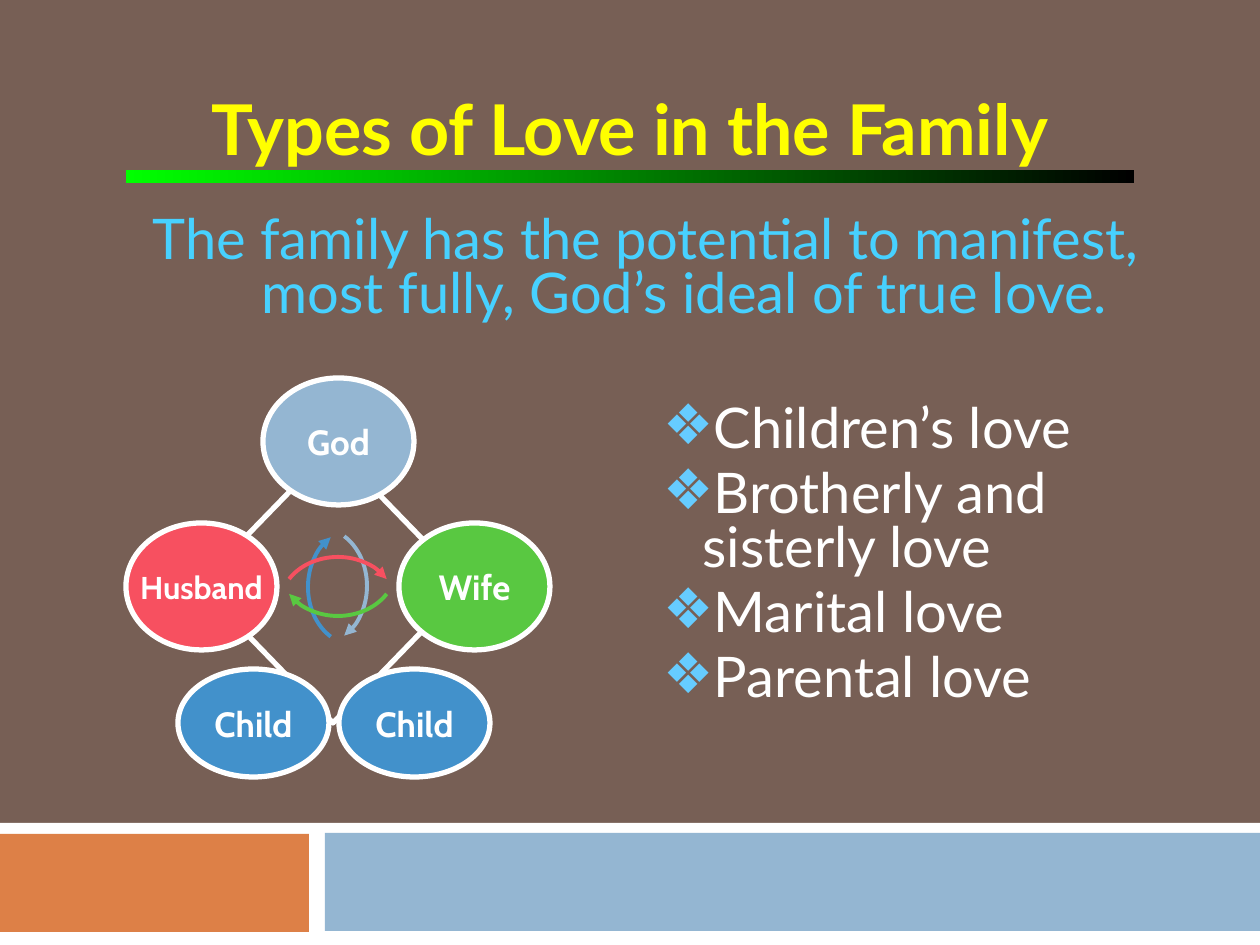
import dataclasses

import lxml.etree
import pptx
import pptx.dml.color
import pptx.enum.shapes
import pptx.enum.text
import pptx.oxml.ns
import pptx.util

SHAPE = pptx.enum.shapes.MSO_SHAPE
ANCHOR = pptx.enum.text.MSO_ANCHOR
ALIGN = pptx.enum.text.PP_ALIGN
RGB = pptx.dml.color.RGBColor.from_string
PX = 914400 // 126


@dataclasses.dataclass(frozen=True)
class Theme:
    ground: str = "775F55"
    white: str = "FFFFFF"
    orange: str = "DD8047"
    pale_blue: str = "94B6D2"
    blue: str = "4291CB"
    green: str = "59C841"
    red: str = "F75060"
    title: str = "FFFF00"
    statement: str = "47D1FF"
    bullet: str = "66CCFF"
    rule_start: str = "00FF00"
    rule_end: str = "000000"
    text_font: str = "Lato"
    diagram_font: str = "Cabin"
    title_size: int = 40
    body_size: int = 32
    member_size: int = 20
    small_member_size: int = 18
    outline: float = 3
    arrow: float = 2.25


theme = Theme()


def add_figure(preset, box, fill=None, line=None, width=theme.outline):
    figure = slide.shapes.add_shape(preset, *[v * PX for v in box])
    figure.shadow.inherit = False
    if fill:
        figure.fill.solid()
        figure.fill.fore_color.rgb = RGB(fill)
    else:
        figure.fill.background()
    if line:
        figure.line.color.rgb = RGB(line)
        figure.line.width = pptx.util.Pt(width)
    else:
        figure.line.fill.background()
    return figure


def fill_placeholder(holder, box, lines, color, size, margin=0, indent=0, bullet=None):
    """Place a placeholder and write its lines with a hanging indent given in px."""
    holder.left, holder.top, holder.width, holder.height = [v * PX for v in box]
    frame = holder.text_frame
    frame.text = "\n".join(lines)
    frame.word_wrap = True
    frame.auto_size = pptx.enum.text.MSO_AUTO_SIZE.NONE
    frame.vertical_anchor = ANCHOR.TOP
    for paragraph in frame.paragraphs:
        paragraph.alignment = ALIGN.LEFT if bullet else ALIGN.CENTER
        paragraph.space_before = pptx.util.Pt(0)
        properties = paragraph._p.get_or_add_pPr()
        properties.set("marL", str(margin * PX))
        properties.set("indent", str(indent * PX))
        qn = pptx.oxml.ns.qn
        if bullet:
            paragraph.level = 1
            bullet_color = lxml.etree.SubElement(properties, qn("a:buClr"))
            lxml.etree.SubElement(bullet_color, qn("a:srgbClr"), val=theme.bullet)
            lxml.etree.SubElement(properties, qn("a:buChar"), char=bullet)
        else:
            lxml.etree.SubElement(properties, qn("a:buNone"))
        paragraph.font.name = theme.text_font
        paragraph.font.size = pptx.util.Pt(size)
        paragraph.font.color.rgb = RGB(color)


presentation = pptx.Presentation()
presentation.slide_width = pptx.util.Inches(10)
presentation.slide_height = pptx.util.Inches(7.5)
slide = presentation.slides.add_slide(presentation.slide_layouts.get_by_name("Two Content"))
slide.background.fill.solid()
slide.background.fill.fore_color.rgb = RGB(theme.ground)

# Footer bands
add_figure(SHAPE.RECTANGLE, (0, 823, 1260, 122), theme.white)
add_figure(SHAPE.RECTANGLE, (0, 834, 309, 98), theme.orange)
add_figure(SHAPE.RECTANGLE, (325, 833, 935, 98), theme.pale_blue)

# Title, statement and list
title, statement, loves = slide.placeholders
fill_placeholder(title, (126, 79, 1008, 183), ["Types of Love in the Family"],
                 theme.title, theme.title_size)
title.text_frame.paragraphs[0].font.bold = True
fill_placeholder(statement, (126, 210, 1040, 189),
                 ["The family has the potential to manifest, most fully, God’s ideal of true love."],
                 theme.statement, theme.body_size, margin=78, indent=-78)
fill_placeholder(loves, (588, 399, 630, 325),
                 ["Children’s love", "Brotherly and sisterly love", "Marital love", "Parental love"],
                 theme.white, theme.body_size, margin=102, indent=-39, bullet="❖")
for holder in (statement, loves):
    for paragraph in holder.text_frame.paragraphs:
        paragraph.line_spacing = 0.8
        paragraph.space_after = pptx.util.Pt(0.2 * theme.body_size)

rule = add_figure(SHAPE.RECTANGLE, (126, 170, 1008, 13), theme.rule_start)
rule.fill.gradient()
rule.fill.gradient_angle = 0
for stop, color in zip(rule.fill.gradient_stops, (theme.rule_start, theme.rule_end)):
    stop.color.rgb = RGB(color)

# Family diagram: frame, arrows of give and take, members
add_figure(SHAPE.DIAMOND, (199, 447, 268, 276), line=theme.white)

# Each arrow: ellipse box, direction of its middle and half its span in degrees
arrows = [
    ((273, 528, 94, 116), 0, 64, theme.pale_blue),
    ((308, 529, 94, 116), 180, 64, theme.blue),
    ((280, 520, 116, 96), 90, 62, theme.green),
    ((280, 557, 116, 96), 270, 62, theme.red),
]
for box, middle, half_span, color in arrows:
    arrow = add_figure(SHAPE.ARC, box, line=color, width=theme.arrow)
    for index, angle in enumerate((middle - half_span, middle + half_span)):
        arrow.adjustments[index] = angle % 360 * 0.6
    lxml.etree.SubElement(arrow.line._get_or_add_ln(), pptx.oxml.ns.qn("a:tailEnd"),
                          type="triangle")

members = [
    ("Wife", (399, 523, 151, 127), theme.green, theme.member_size),
    ("Husband", (126, 523, 151, 127), theme.red, theme.small_member_size),
    ("God", (263, 378, 151, 127), theme.pale_blue, theme.member_size),
    ("Child", (178, 669, 151, 108), theme.blue, theme.member_size),
    ("Child", (339, 669, 151, 108), theme.blue, theme.member_size),
]
for name, box, color, size in members:
    member = add_figure(SHAPE.OVAL, box, color, theme.white)
    frame = member.text_frame
    frame.text = name
    frame.word_wrap = False
    frame.vertical_anchor = ANCHOR.MIDDLE
    paragraph = frame.paragraphs[0]
    paragraph.alignment = ALIGN.CENTER
    paragraph.font.name = theme.diagram_font
    paragraph.font.size = pptx.util.Pt(size)
    paragraph.font.bold = True
    paragraph.font.color.rgb = RGB(theme.white)

presentation.save("out.pptx")
